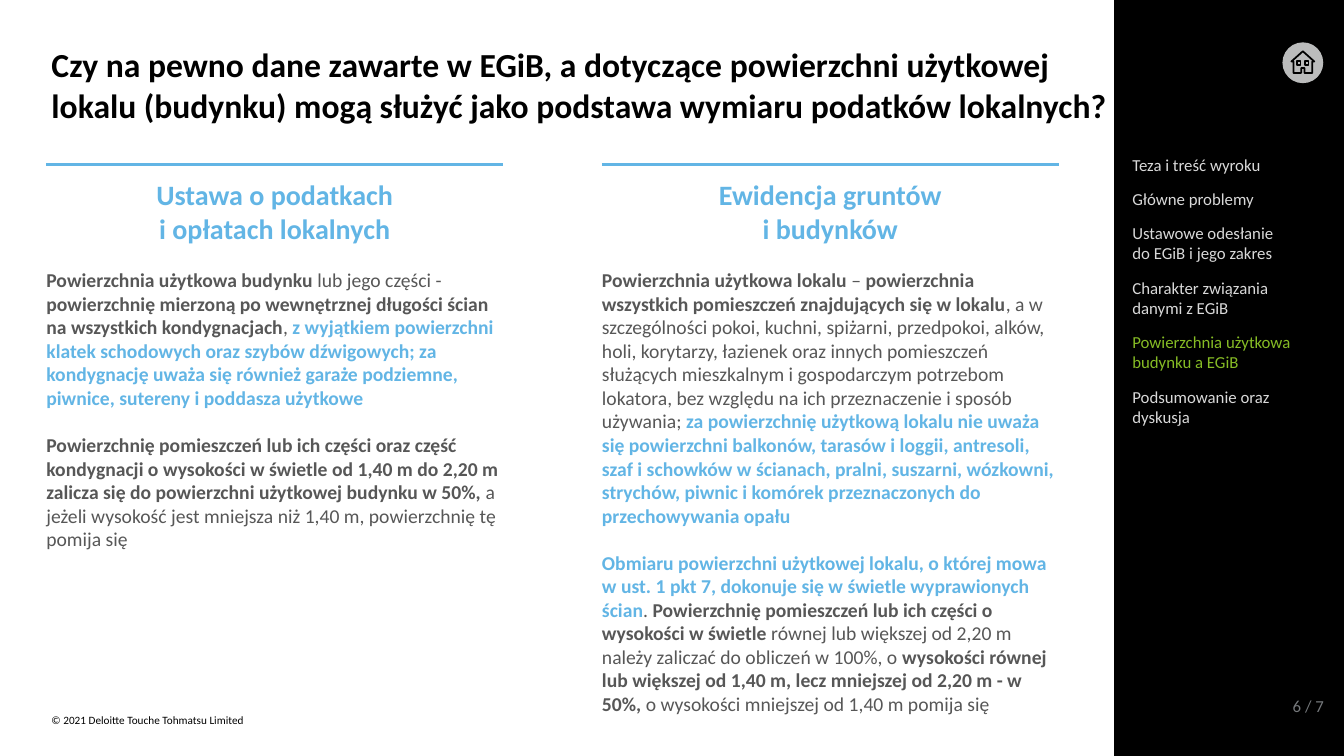
"""Build a slide that compares two definitions of usable floor area."""
import lxml.etree
import pptx
import pptx.dml.color
import pptx.enum.shapes
import pptx.enum.text
import pptx.oxml.ns
import pptx.util

WIDE, HIGH = pptx.util.Inches(13.33), pptx.util.Inches(7.5)
BLACK, BLUE, GREY, PALE, GREEN = "000000", "62B5E5", "575757", "D9D9D9", "86BC25"
LOOKS = {"plain": (GREY, False), "bold": (GREY, True), "blue": (BLUE, True)}
ALIGN = pptx.enum.text.PP_ALIGN
SHAPE = pptx.enum.shapes.MSO_SHAPE

TITLE = ("Czy na pewno dane zawarte w EGiB, a dotyczące powierzchni użytkowej "
         "lokalu (budynku) mogą służyć jako podstawa wymiaru podatków lokalnych?")

TAX = ("Ustawa o podatkach\vi opłatach lokalnych", [
    [("Powierzchnia użytkowa budynku", "bold"),
     (" lub jego części - ", "plain"),
     ("powierzchnię mierzoną po wewnętrznej długości ścian na wszystkich "
      "kondygnacjach", "bold"),
     (", ", "plain"),
     ("z wyjątkiem powierzchni klatek schodowych oraz szybów dźwigowych; za "
      "kondygnację uważa się również garaże podziemne, piwnice, sutereny i "
      "poddasza użytkowe", "blue")],
    [("Powierzchnię pomieszczeń lub ich części oraz część kondygnacji o "
      "wysokości w świetle od 1,40 m do 2,20 m zalicza się do powierzchni "
      "użytkowej budynku w 50%, ", "bold"),
     ("a jeżeli wysokość jest mniejsza niż 1,40 m, powierzchnię tę pomija się",
      "plain")]])

LAND = ("Ewidencja gruntów\vi budynków", [
    [("Powierzchnia użytkowa lokalu ", "bold"),
     ("– ", "plain"),
     ("powierzchnia wszystkich pomieszczeń znajdujących się w lokalu", "bold"),
     (", a w szczególności pokoi, kuchni, spiżarni, przedpokoi, alków, holi, "
      "korytarzy, łazienek oraz innych pomieszczeń służących mieszkalnym i "
      "gospodarczym potrzebom lokatora, bez względu na ich przeznaczenie i "
      "sposób używania; ", "plain"),
     ("za powierzchnię użytkową lokalu nie uważa się powierzchni balkonów, "
      "tarasów i loggii, antresoli, szaf i schowków w ścianach, pralni, "
      "suszarni, wózkowni, strychów, piwnic i komórek przeznaczonych do "
      "przechowywania opału", "blue")],
    [("Obmiaru powierzchni użytkowej lokalu, o której mowa w ust. 1 pkt 7, "
      "dokonuje się w świetle wyprawionych ścian", "blue"),
     (". ", "plain"),
     ("Powierzchnię pomieszczeń lub ich części o wysokości w świetle", "bold"),
     (" równej lub większej od 2,20 m należy zaliczać do obliczeń w 100%, o",
      "plain"),
     (" wysokości równej lub większej od 1,40 m, lecz mniejszej od 2,20 m - "
      "w 50%, ", "bold"),
     ("o wysokości mniejszej od 1,40 m pomija się", "plain")]])

MENU = [("Teza i treść wyroku", 1, 11.55, PALE),
        ("Główne problemy", 1, 11.55, PALE),
        ("Ustawowe odesłanie do EGiB i jego zakres", 2, 11.55, PALE),
        ("Charakter związania danymi z EGiB", 2, 12.98, PALE),
        ("Powierzchnia użytkowa budynku a EGiB", 2, 13.58, GREEN),
        ("Podsumowanie oraz dyskusja", 2, 12.98, PALE)]

HOUSE = [(22, 47), (50, 22), (78, 47), (73, 47), (73, 75), (54, 75),
         (54, 63), (46, 63), (46, 75), (27, 75), (27, 47)]


def area(x, y, w, h):
    """Turn percentages of the slide into lengths."""
    return [int(side * part / 100)
            for side, part in zip((WIDE, HIGH, WIDE, HIGH), (x, y, w, h))]


def paint(target, tint):
    """Give a fill, line or font format a solid colour."""
    if hasattr(target, "solid"):
        target.solid()
        target = target.fore_color
    else:
        target = target.color
    target.rgb = pptx.dml.color.RGBColor.from_string(tint)


def style(run, size, tint, bold=False):
    """Format one run."""
    run.font.name = "Calibri"
    run.font.size = pptx.util.Pt(size)
    run.font.bold = bold
    paint(run.font, tint)


def frame(shape):
    """Clear the margins of a text shape and return its frame."""
    text = shape.text_frame
    text.word_wrap = True
    text.auto_size = pptx.enum.text.MSO_AUTO_SIZE.NONE
    text.vertical_anchor = pptx.enum.text.MSO_ANCHOR.TOP
    text.margin_left = text.margin_right = text.margin_top = text.margin_bottom = 0
    return text


def place(shape, spot):
    """Move a placeholder."""
    shape.left, shape.top, shape.width, shape.height = area(*spot)


def space(para, align, before=0):
    """Set a paragraph's alignment and spacing, without a bullet."""
    props = para._p.get_or_add_pPr()
    props.set("marL", "0")
    props.set("indent", "0")
    lxml.etree.SubElement(props, pptx.oxml.ns.qn("a:buNone"))
    para.alignment = align
    para.line_spacing = 1.0
    para.space_before = pptx.util.Pt(before)


def label(slide, text, spot, size, tint, align=ALIGN.LEFT):
    """Add a small text box."""
    words = frame(slide.shapes.add_textbox(*area(*spot)))
    words.text = text
    words.paragraphs[0].alignment = align
    style(words.paragraphs[0].runs[0], size, tint)


def head(slide):
    """Fill the title."""
    place(slide.shapes.title, (3.83, 5.87, 79.6, 4.93))
    words = frame(slide.shapes.title)
    words.text = TITLE
    space(words.paragraphs[0], ALIGN.LEFT)
    style(words.paragraphs[0].runs[0], 24, BLACK, True)


def column(slide, holder, left, name, paras):
    """Fill one body column and draw the rule above it."""
    width = 33.98
    place(holder, (left, 23.47, width, 61.73))
    words = frame(holder)
    words.text = name
    first = words.paragraphs[0]
    space(first, ALIGN.CENTER)
    for run in first.runs:
        style(run, 20, BLUE, True)
    for gap in first._p.findall(pptx.oxml.ns.qn("a:br")):
        lxml.etree.SubElement(gap, pptx.oxml.ns.qn("a:rPr")).set("sz", "2000")
    for parts in paras:
        para = words.add_paragraph()
        space(para, ALIGN.LEFT, 16.8)
        for text, look in parts:
            run = para.add_run()
            run.text = text
            style(run, 14, *LOOKS[look])
    x, y, span, _ = area(left, 21.73, width, 0)
    rule = slide.shapes.add_connector(
        pptx.enum.shapes.MSO_CONNECTOR.STRAIGHT, x, y, x + span, y)
    paint(rule.line, BLUE)
    rule.line.width = pptx.util.Pt(2)
    lxml.etree.SubElement(rule._element.spPr, pptx.oxml.ns.qn("a:effectLst"))


def block(slide, kind, spot, tint):
    """Add a plain filled shape."""
    shape = slide.shapes.add_shape(kind, *area(*spot))
    shape.shadow.inherit = False
    paint(shape.fill, tint)
    shape.line.fill.background()


def trace(slide, points, x, y, scale):
    """Draw a closed black outline."""
    build = slide.shapes.build_freeform(*points[0], scale=scale)
    build.add_line_segments(points[1:], close=True)
    shape = build.convert_to_shape(x, y)
    shape.shadow.inherit = False
    shape.fill.background()
    paint(shape.line, BLACK)
    shape.line.width = pptx.util.Pt(1.25)


def home(slide):
    """Draw the house button."""
    spot = (95.42, 5.6, 3.04, 5.4)
    block(slide, SHAPE.OVAL, spot, "BBBCBC")
    x, y, size, _ = area(*spot)
    panes = [[(a, 46), (a + 8, 46), (a + 8, 55), (a, 55)] for a in (36, 56)]
    for points in [HOUSE, *panes]:
        trace(slide, points, x, y, size / 100)


def menu(slide):
    """Stack the entries of the side menu."""
    top, line, gap = 20.4, 2.67, 1.87
    for text, lines, width, tint in MENU:
        label(slide, text, (84.25, top, width, lines * line), 12, tint)
        top += lines * line + gap


def main():
    """Build and save the slide."""
    deck = pptx.Presentation()
    deck.slide_width, deck.slide_height = WIDE, HIGH
    slide = deck.slides.add_slide(deck.slide_layouts[3])
    head(slide)
    block(slide, SHAPE.RECTANGLE, (82.9, 0, 17.1, 100), BLACK)
    home(slide)
    column(slide, slide.placeholders[1], 3.45, *TAX)
    column(slide, slide.placeholders[2], 44.79, *LAND)
    menu(slide)
    label(slide, "© 2021 Deloitte Touche Tohmatsu Limited",
          (3.83, 94.4, 44, 1.73), 8, BLACK)
    label(slide, "6 / 7", (84.32, 92, 14.18, 2.67), 12, "75787B", ALIGN.RIGHT)
    deck.save("out.pptx")


if __name__ == "__main__":
    main()
